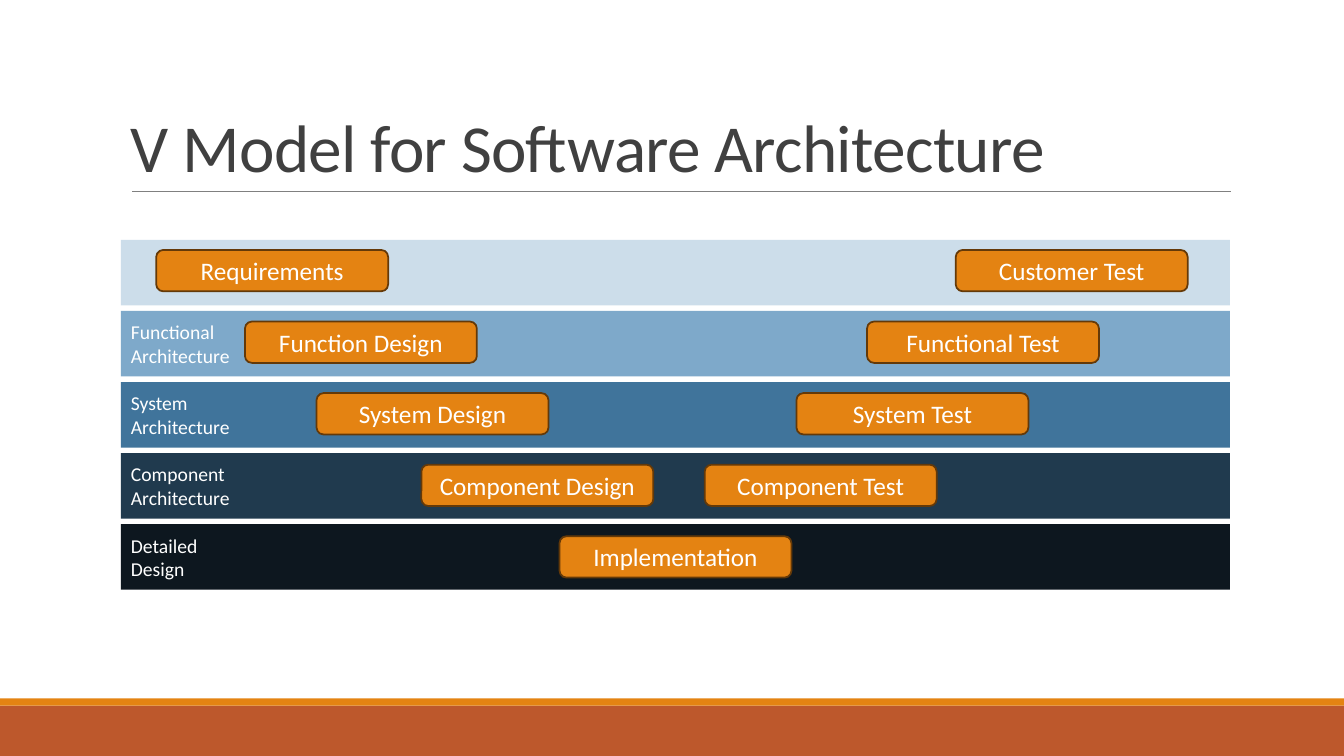
from pptx import Presentation
from pptx import util as u
from pptx.dml.color import RGBColor
from pptx.enum import shapes, text
from pptx.oxml.ns import qn
from lxml import etree

WIDE, HIGH = 13.33, 7.5
LEFT, SPAN = 1.2, 11
ORANGE, WHITE = "E48312", "FFFFFF"
RECT = shapes.MSO_SHAPE.RECTANGLE
ROUND = shapes.MSO_SHAPE.ROUNDED_RECTANGLE
MIDDLE = text.MSO_ANCHOR.MIDDLE

LEVELS = [
    ("CCDDEA", "", [("Requirements", 1.55), ("Customer Test", 9.48)]),
    ("7EA9CA", "Functional\nArchitecture", [("Function Design", 2.43), ("Functional Test", 8.6)]),
    ("40749B", "System\nArchitecture", [("System Design", 3.14), ("System Test", 7.9)]),
    ("203A4E", "Component\nArchitecture", [("Component Design", 4.18), ("Component Test", 6.99)]),
    ("0D171F", "Detailed\nDesign", [("Implementation", 5.55)]),
]


def color(code):
    return RGBColor.from_string(code)


def inches(*sizes):
    return [u.Inches(size) for size in sizes]


def write(shape, words, size=18, ink=WHITE, align=text.PP_ALIGN.LEFT,
          anchor=MIDDLE, leading=None, track=None):
    frame = shape.text_frame
    frame.word_wrap = True
    frame.vertical_anchor = anchor
    frame.text = words
    for para in frame.paragraphs:
        para.alignment = align
        if leading:
            para.line_spacing = leading
        for run in para.runs:
            run.font.name = "Calibri"
            run.font.size = u.Pt(size)
            run.font.color.rgb = color(ink)
            if track is not None:
                run._r.get_or_add_rPr().set("spc", str(track))


def block(slide, box, fill, kind=RECT, edge=None):
    shape = slide.shapes.add_shape(kind, *inches(*box))
    shape.shadow.inherit = False
    shape.fill.solid()
    shape.fill.fore_color.rgb = color(fill)
    if edge:
        shape.line.color.rgb = color(edge)
        shape.line.width = u.Pt(1.25)
    else:
        shape.line.fill.background()
    return shape


def footer(slide, top):
    block(slide, (0, top, WIDE, HIGH - top), "BD582C")
    block(slide, (0, top - 0.07, WIDE, 0.07), ORANGE)


def header(slide, left, top, width, height):
    title = slide.shapes.add_textbox(*inches(left, top, width, height))
    write(title, "V Model for Software Architecture", size=48, ink="404040",
          anchor=text.MSO_ANCHOR.BOTTOM, leading=0.85, track=-50)
    base = top + height
    rule = slide.shapes.add_connector(
        shapes.MSO_CONNECTOR.STRAIGHT, *inches(left + 0.11, base, left + width + 0.01, base))
    rule.line.color.rgb = color("808080")
    rule.line.width = u.Pt(0.5)
    etree.SubElement(rule._element.spPr, qn("a:effectLst"))


def model(slide, left, top, width, height):
    band = 0.65
    pitch = (height - band) / (len(LEVELS) - 1)
    for row, (fill, label, steps) in enumerate(LEVELS):
        layer = block(slide, (left, top + row * pitch, width, band), fill)
        if label:
            write(layer, label, size=14)
        for name, start in steps:
            step = block(slide, (start, top + 0.1 + row * 0.71, 2.3, 0.41),
                         ORANGE, ROUND, "643908")
            write(step, name, align=text.PP_ALIGN.CENTER)


def main():
    deck = Presentation()
    deck.slide_width, deck.slide_height = inches(WIDE, HIGH)
    slide = deck.slides.add_slide(deck.slide_layouts[6])
    footer(slide, 7)
    header(slide, LEFT, 0.31, SPAN, 1.59)
    model(slide, LEFT, 2.38, SPAN, 3.47)
    deck.save("out.pptx")


if __name__ == "__main__":
    main()
